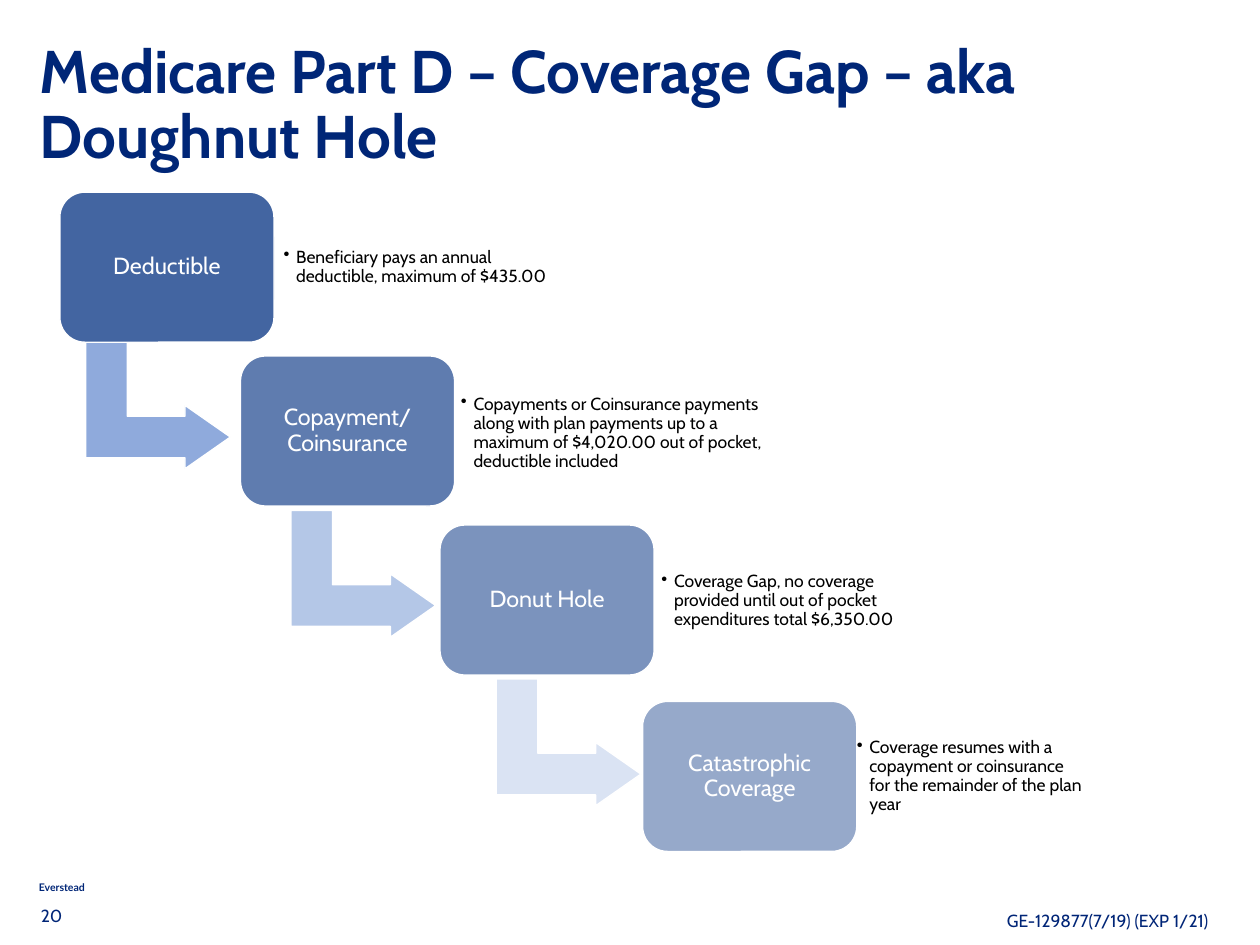
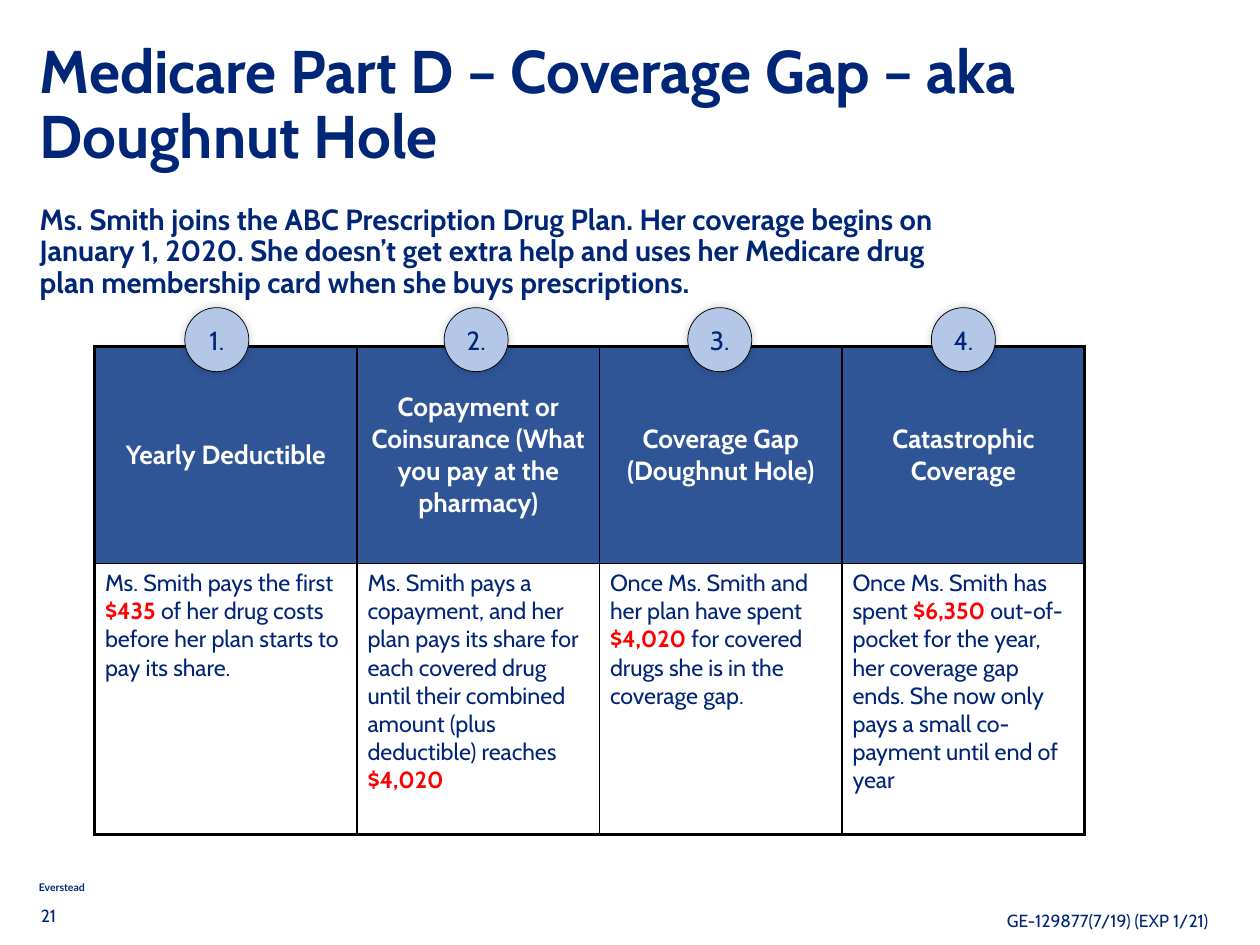
from lxml import etree
from pptx import Presentation
from pptx.dml.color import RGBColor
from pptx.enum.shapes import MSO_SHAPE
from pptx.enum.text import MSO_ANCHOR, PP_ALIGN
from pptx.oxml.ns import qn
from pptx.util import Inches, Pt

TOP, MID = MSO_ANCHOR.TOP, MSO_ANCHOR.MIDDLE
LEFT, CENTER = PP_ALIGN.LEFT, PP_ALIGN.CENTER
ROUND, BENT, OVAL = MSO_SHAPE.ROUNDED_RECTANGLE, MSO_SHAPE.BENT_UP_ARROW, MSO_SHAPE.OVAL

NAVY = RGBColor(0x00, 0x26, 0x77)
INK = RGBColor(0x00, 0x25, 0x77)
BLUE = RGBColor(0x2F, 0x55, 0x97)
PALE = RGBColor(0xB4, 0xC7, 0xE7)
ARROWS = [RGBColor(0x8F, 0xAA, 0xDC), PALE, RGBColor(0xDA, 0xE3, 0xF3)]
RED = RGBColor(0xFF, 0x00, 0x00)
WHITE = RGBColor(0xFF, 0xFF, 0xFF)
BLACK = RGBColor(0x00, 0x00, 0x00)
FONT = "Cabin"

# Grid: 12 columns by 9 rows
deck = Presentation()
deck.slide_width, deck.slide_height = Inches(12), Inches(9)
COL, ROW = deck.slide_width // 12, deck.slide_height // 9


def put(page, box, kind=None, fill=None, edge=None, width=1):
    """Place a text box, or a preset shape if a kind is given."""
    spot = [int(n * unit) for n, unit in zip(box, (COL, ROW, COL, ROW))]
    if kind is None:
        return page.shapes.add_textbox(*spot)
    shape = page.shapes.add_shape(kind, *spot)
    shape.shadow.inherit = False
    shape.fill.solid()
    shape.fill.fore_color.rgb = fill
    shape.line.color.rgb = edge
    shape.line.width = Pt(width)
    return shape


def write(frame, runs, size, tint, bold=False, align=LEFT, anchor=TOP,
          space=0.9, pad=(0.1, 0.05), font=FONT, bullet=False):
    """Fill a frame or cell with one paragraph; amounts in a mix turn red."""
    frame.margin_left = frame.margin_right = int(pad[0] * COL)
    frame.margin_top = frame.margin_bottom = int(pad[1] * ROW)
    frame.vertical_anchor = anchor
    body = getattr(frame, "text_frame", frame)
    body.word_wrap = True
    para = body.paragraphs[0]
    para.alignment, para.line_spacing = align, space
    if bullet:
        props = para._p.get_or_add_pPr()
        props.set("marL", str(int(0.12 * COL)))
        props.set("indent", str(int(-0.12 * COL)))
        etree.SubElement(props, qn("a:buChar")).set("char", "•")
    for text in runs:
        key = text.startswith("$")
        run = para.add_run()
        run.text = text
        run.font.name, run.font.size = font, Pt(size)
        run.font.bold = bold or key
        run.font.color.rgb = RED if key else tint


# Shared title, mark and footers
pages = []
for num in ("20", "21"):
    page = deck.slides.add_slide(deck.slide_layouts[6])
    pages.append(page)
    write(put(page, (0.3, 8.33, 1.86, 0.24)).text_frame, ["Everstead"], 7.2, NAVY,
          True, anchor=MID, space=1, pad=(0.07, 0.04), font="Lato")
    write(put(page, (0.28, 0.63, 11.24, 0.77)).text_frame,
          ["Medicare Part D – Coverage Gap – aka Doughnut Hole"], 41.3, NAVY,
          True, anchor=MID)
    for left, top, text in ((0.29, 8.59, num),
                            (9.49, 8.64, "GE-129877(7/19) (EXP 1/21)")):
        write(put(page, (left, top, 2.38, 0.3)).text_frame, [text], 12, INK)
steps, case = pages

# Stair of stages: box left, top, opacity, name, note left, top, width, text
STAGES = [
    (0.57, 1.83, 90, "Deductible", 2.65, 1.97, 2.61,
     "Beneficiary pays an annual deductible, maximum of $435.00"),
    (2.29, 3.39, 77, "Copayment/Coinsurance", 4.34, 3.55, 3.25,
     "Copayments or Coinsurance payments along with plan payments up to "
     "a maximum of $4,020.00 out of pocket, deductible included"),
    (4.19, 5, 63, "Donut Hole", 6.25, 5.15, 2.53,
     "Coverage Gap, no coverage provided until out of pocket "
     "expenditures total $6,350.00"),
    (6.12, 6.68, 50, "Catastrophic Coverage", 8.11, 6.82, 2.28,
     "Coverage resumes with a copayment or coinsurance for the remainder "
     "of the plan year"),
]
for i, (left, top, alpha, name, x, y, wide, note) in enumerate(STAGES):
    if i < len(ARROWS):
        arrow = put(steps, (0.9 + 1.955 * i, 3.17 + 1.605 * i, 1.21, 1.38),
                    BENT, ARROWS[i], WHITE)
        arrow.rotation = 90
        for k, value in enumerate((0.328, 0.25, 0.358)):
            arrow.adjustments[k] = value
    stage = put(steps, (left, top, 2.04, 1.43), ROUND, BLUE, WHITE)
    tone = stage._element.spPr.find(qn("a:solidFill"))[0]
    etree.SubElement(tone, qn("a:alpha")).set("val", str(alpha * 1000))
    write(stage.text_frame, [name], 16, WHITE, align=CENTER, anchor=MID,
          pad=(0.14, 0.14))
    write(put(steps, (x, y, wide, 1.15)).text_frame, [note], 12, BLACK,
          anchor=MID, pad=(0.05, 0.05), bullet=True)

# Case intro
write(put(case, (0.28, 1.62, 8.98, 1.57)).text_frame,
      ["Ms. Smith joins the ABC Prescription Drug Plan. Her coverage begins on "
       "January 1, 2020. She doesn’t get extra help and uses her Medicare drug "
       "plan membership card when she buys prescriptions."],
      20, NAVY, True, anchor=MID)

# Case table: heads, then texts split at the amounts
HEADS = ["Yearly Deductible",
         "Copayment or Coinsurance (What you pay at the pharmacy)",
         "Coverage Gap (Doughnut Hole)", "Catastrophic Coverage"]
TEXTS = [
    ["Ms. Smith pays the first ", "$435 ",
     "of her drug costs before her plan starts to pay its share."],
    ["Ms. Smith pays a copayment, and her plan pays its share for each covered "
     "drug until their combined amount (plus deductible) reaches ", "$4,020"],
    ["Once Ms. Smith and her plan have spent ", "$4,020 ",
     "for covered drugs she is in the coverage gap."],
    ["Once Ms. Smith has spent ", "$6,350 ",
     "out-of-pocket for the year, her coverage gap ends. She now only pays a "
     "small co-payment until end of year"],
]
WIDTHS, TALLS = (2.5, 2.31, 2.31, 2.31), (2.07, 2.58)
table = case.shapes.add_table(2, 4, int(0.9 * COL), int(3.3 * ROW),
                              int(sum(WIDTHS) * COL), int(sum(TALLS) * ROW)).table
table.first_row = table.horz_banding = False
for col, wide in zip(table.columns, WIDTHS):
    col.width = int(wide * COL)
for r, tall in enumerate(TALLS):
    table.rows[r].height = int(tall * ROW)
    for c in range(4):
        cell = table.cell(r, c)
        cell.fill.solid()
        cell.fill.fore_color.rgb = WHITE if r else BLUE
        if r:
            write(cell, TEXTS[c], 16, INK, space=1)
        else:
            write(cell, [HEADS[c]], 18, WHITE, True, CENTER, MID, 1)
        # Heavy lines outside, thin ones inside
        props = cell._tc.get_or_add_tcPr()
        outer = (c == 0, c == 3, r == 0, r == 1)
        for k, (side, heavy) in enumerate(zip("LRTB", outer)):
            line = etree.Element(qn("a:ln" + side), w=str(Pt(2.25 if heavy else 1)))
            solid = etree.SubElement(line, qn("a:solidFill"))
            etree.SubElement(solid, qn("a:srgbClr")).set("val", str(BLACK))
            props.insert(k, line)

# Numbered discs with a soft halo
for i, left in enumerate((1.76, 4.23, 6.55, 8.87), 1):
    disc = put(case, (left, 2.93, 0.61, 0.61), OVAL, PALE, BLACK, 0.5)
    glow = etree.SubElement(disc._element.spPr.find(qn("a:effectLst")),
                            qn("a:outerShdw"), blurRad=str(Pt(6)), dist="0")
    tone = etree.SubElement(glow, qn("a:srgbClr"), val=str(BLACK))
    etree.SubElement(tone, qn("a:alpha")).set("val", "20000")
    write(disc.text_frame, [f"{i}."], 18, INK, align=CENTER, anchor=MID,
          space=1, pad=(0, 0))

deck.save("out.pptx")
